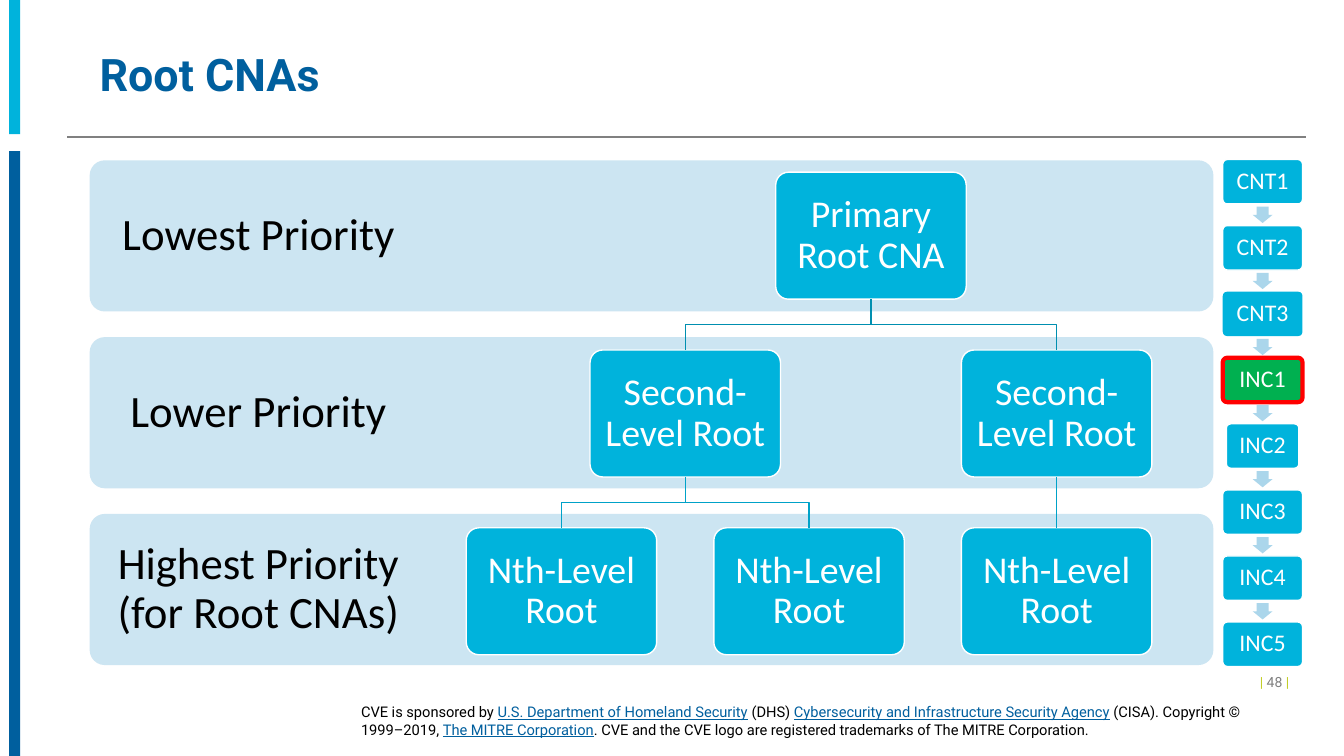
import pptx
import pptx.dml.color
import pptx.enum.shapes
import pptx.enum.text
import pptx.oxml.ns
import pptx.util
import lxml.etree

Cm = pptx.util.Cm
Pt = pptx.util.Pt
SHAPE = pptx.enum.shapes.MSO_SHAPE
ALIGN = pptx.enum.text.PP_ALIGN
ANCHOR = pptx.enum.text.MSO_ANCHOR

COLORS = {
    "cyan": "00B3DC", "blue": "005F9E", "pale": "CCE5F2", "arrow": "ABD6EB",
    "white": "FFFFFF", "black": "000000", "gray": "808080", "lime": "C1CD23",
    "green": "00B050", "red": "FF0000", "upper": "008FB0", "lower": "00A2C8",
}


class SlideBuilder:
    heading_font = "Roboto"
    diagram_font = "Calibri"

    def __init__(self, slide):
        self.slide = slide

    def color(self, name):
        return pptx.dml.color.RGBColor.from_string(COLORS[name])

    def set_font(self, font, name, size, color, bold=False):
        font.name = name
        font.size = Pt(size)
        font.bold = bold
        font.color.rgb = self.color(color)

    def set_line(self, line, color, width=1):
        line.color.rgb = self.color(color)
        line.width = Pt(width)

    def shape(self, kind, left, top, width, height, fill, adjustments=(), line=None, line_width=1):
        shape = self.slide.shapes.add_shape(kind, Cm(left), Cm(top), Cm(width), Cm(height))
        shape.shadow.inherit = False
        shape.fill.solid()
        shape.fill.fore_color.rgb = self.color(fill)
        for index, value in enumerate(adjustments):
            shape.adjustments[index] = value
        if line:
            self.set_line(shape.line, line, line_width)
        else:
            shape.line.fill.background()
        return shape

    def card(self, text, left, top, width, height, fill, size, color="white",
             inset=0.28, right_inset=None, line="white", line_width=1):
        card = self.shape(SHAPE.ROUNDED_RECTANGLE, left, top, width, height, fill,
                          (0.1,), line, line_width)
        frame = card.text_frame
        frame.word_wrap = True
        frame.vertical_anchor = ANCHOR.MIDDLE
        frame.margin_left = frame.margin_top = frame.margin_bottom = Cm(inset)
        frame.margin_right = Cm(right_inset or inset)
        para = frame.paragraphs[0]
        para.text = text
        para.alignment = ALIGN.CENTER
        para.line_spacing = 0.9
        self.set_font(para.font, self.diagram_font, size, color)
        return card

    def text(self, spans, left, top, width, height, size, anchor=ANCHOR.TOP,
             align=ALIGN.LEFT, bold=False, inset=None, line_spacing=None):
        box = self.slide.shapes.add_textbox(Cm(left), Cm(top), Cm(width), Cm(height))
        frame = box.text_frame
        frame.word_wrap = True
        frame.vertical_anchor = anchor
        if inset is not None:
            frame.margin_left = frame.margin_right = Cm(inset)
            frame.margin_top = frame.margin_bottom = Cm(inset)
        para = frame.paragraphs[0]
        para.alignment = align
        if line_spacing:
            para.line_spacing = Pt(line_spacing)
        for words, color, underline in spans:
            span = para.add_run()
            span.text = words
            self.set_font(span.font, self.heading_font, size, color, bold)
            if underline:
                span.font.underline = True

    def connector(self, start, end, color):
        connector = self.slide.shapes.add_connector(
            pptx.enum.shapes.MSO_CONNECTOR.STRAIGHT, *map(Cm, start), *map(Cm, end))
        self.set_line(connector.line, color)
        lxml.etree.SubElement(connector._element.spPr, pptx.oxml.ns.qn("a:effectLst"))
        return connector

    def elbow(self, start, end, color):
        middle = (start[1] + end[1]) / 2
        corners = [(start[0], middle), (end[0], middle), end]
        builder = self.slide.shapes.build_freeform(Cm(start[0]), Cm(start[1]))
        builder.add_line_segments([(Cm(x), Cm(y)) for x, y in corners], close=False)
        elbow = builder.convert_to_shape()
        elbow.shadow.inherit = False
        elbow.fill.background()
        self.set_line(elbow.line, color)


def add_frame(builder):
    builder.shape(SHAPE.RECTANGLE, 0.23, 0, 0.28, 3.38, "cyan")
    builder.shape(SHAPE.RECTANGLE, 0.23, 3.81, 0.28, 15.24, "blue")
    builder.connector((1.7, 3.45), (32.92, 3.45), "gray")
    builder.text([("Root CNAs", "blue", False)], 2.26, 0.76, 25.91, 2.41, 32,
                 anchor=ANCHOR.MIDDLE, bold=True, line_spacing=32)
    builder.text([
        ("CVE is sponsored by ", "black", False),
        ("U.S. Department of Homeland Security", "blue", True),
        (" (DHS) ", "black", False),
        ("Cybersecurity and Infrastructure Security Agency", "blue", True),
        (" (CISA). Copyright © 1999–2019, ", "black", False),
        ("The MITRE Corporation", "blue", True),
        (". CVE and the CVE logo are registered trademarks of The MITRE Corporation.",
         "black", False),
    ], 8.97, 17.58, 23.27, 1.14, 10.5, inset=0.13)
    builder.text([("| ", "lime", False), ("48 ", "gray", False), ("|", "lime", False)],
                 30.91, 17.02, 1.83, 0.51, 10, anchor=ANCHOR.BOTTOM, align=ALIGN.RIGHT)


def add_hierarchy(builder):
    band_width, label_width, band_inset = 28.32, 8.51, 0.53
    bands = ["Lowest Priority", "Lower Priority", "Highest Priority (for Root CNAs)"]
    for row, label in enumerate(bands):
        builder.card(label, 2.26, 4.04 + 4.455 * row, band_width, 3.81, "pale", 32, "black",
                     band_inset, band_width - label_width + band_inset, line=None)

    node_width, node_height = 4.8, 3.2
    nodes = {
        "primary": ("Primary Root CNA", 0, 1.25, None),
        "second left": ("Second-Level Root", 1, 0.5, "primary"),
        "second right": ("Second-Level Root", 1, 2, "primary"),
        "nth left": ("Nth-Level Root", 2, 0, "second left"),
        "nth middle": ("Nth-Level Root", 2, 1, "second left"),
        "nth right": ("Nth-Level Root", 2, 2, "second right"),
    }
    placed = {}
    for name, (label, row, column, parent) in nodes.items():
        center, top = 14.15 + 6.24 * column, 4.34 + 4.48 * row
        card = builder.card(label, center - node_width / 2, top, node_width, node_height,
                            "cyan", 27)
        placed[name] = (card, center, top)
        if not parent:
            continue
        parent_card, parent_center, parent_top = placed[parent]
        start, end = (parent_center, parent_top + node_height), (center, top)
        color = "upper" if row == 1 else "lower"
        if parent_center == center:
            link = builder.connector(start, end, color)
            link.begin_connect(parent_card, 2)
            link.end_connect(card, 0)
        else:
            builder.elbow(start, end, color)


def add_steps(builder):
    center, first_top, pitch = 31.82, 4.02, 1.665
    steps = ["CNT1", "CNT2", "CNT3", "INC1", "INC2", "INC3", "INC4", "INC5"]
    styles = {
        "CNT3": {"line": None},
        "INC1": {"fill": "green", "line": "red", "line_width": 3},
        "INC2": {"width": 1.83},
    }
    for index, step in enumerate(steps):
        style = {"width": 2.01, "fill": "cyan", **styles.get(step, {})}
        top = first_top + pitch * index
        builder.card(step, center - style["width"] / 2, top, height=1.12, size=17,
                     inset=0.18, **style)
        if index < len(steps) - 1:
            builder.shape(SHAPE.DOWN_ARROW, center - 0.25, top + 1.19, 0.5, 0.41, "arrow",
                          (0.6, 0.5))


def main():
    deck = pptx.Presentation()
    deck.slide_width = Cm(33.87)
    deck.slide_height = Cm(19.05)
    builder = SlideBuilder(deck.slides.add_slide(deck.slide_layouts[6]))
    add_frame(builder)
    add_hierarchy(builder)
    add_steps(builder)
    deck.save("out.pptx")


if __name__ == "__main__":
    main()
